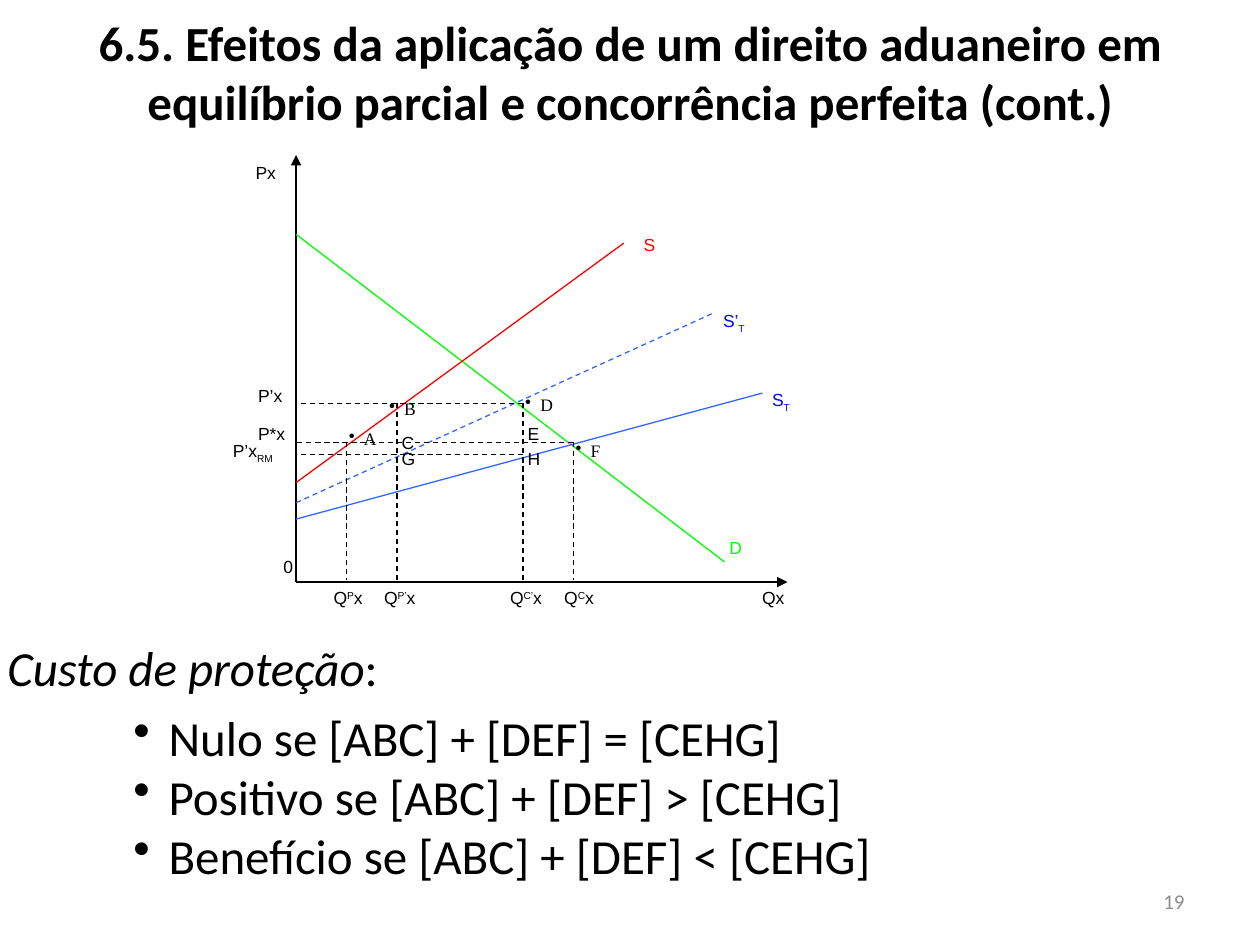
"""Build the slide on the effects of a customs duty in partial equilibrium."""
from lxml import etree
from pptx import Presentation
from pptx.dml.color import RGBColor
from pptx.enum.dml import MSO_LINE
from pptx.enum.shapes import MSO_CONNECTOR
from pptx.enum.text import MSO_ANCHOR, PP_ALIGN
from pptx.oxml.ns import qn
from pptx.util import Inches, Pt

STRAIGHT = MSO_CONNECTOR.STRAIGHT
DASH = MSO_LINE.DASH
TOP, MIDDLE = MSO_ANCHOR.TOP, MSO_ANCHOR.MIDDLE
LEFT, CENTER, RIGHT = PP_ALIGN.LEFT, PP_ALIGN.CENTER, PP_ALIGN.RIGHT
SUB, SUPER = -30, 30
COLORS = {"black": "000000", "gray": "8C8C8C", "green": "00FF00",
          "red": "FF0000", "sky": "3366FF", "blue": "0000FF"}


class Deck:
    """Hold the style and the current slide."""

    body, label, mark = "Calibri", "Arial", "Times New Roman"

    def __init__(self, show):
        self.slide = show.slides.add_slide(show.slide_layouts[5])

    def run(self, par, text, size, font, color="black", bold=False, italic=False, base=0):
        run = par.add_run()
        run.text = text
        run.font.size, run.font.name = Pt(size), font
        run.font.bold, run.font.italic = bold, italic
        run.font.color.rgb = RGBColor.from_string(COLORS[color])
        if base:
            run.font._element.set("baseline", str(base * 1000))

    def bullet(self, par, margin, hang):
        props = par._p.get_or_add_pPr()
        props.set("marL", str(Inches(margin)))
        props.set("indent", str(-Inches(hang)))
        etree.SubElement(props, qn("a:buChar")).set("char", "•")

    def title(self, text, left, top, width, height):
        shape = self.slide.shapes.title
        shape.left, shape.top = Inches(left), Inches(top)
        shape.width, shape.height = Inches(width), Inches(height)
        frame = shape.text_frame
        frame.word_wrap, frame.vertical_anchor = True, TOP
        par = frame.paragraphs[0]
        par.alignment = CENTER
        self.run(par, text, 28, self.body, bold=True)

    def box(self, left, top, width, height, anchor=TOP, align=LEFT):
        shape = self.slide.shapes.add_textbox(
            Inches(left), Inches(top), Inches(width), Inches(height))
        frame = shape.text_frame
        frame.word_wrap, frame.vertical_anchor = True, anchor
        frame.paragraphs[0].alignment = align
        return frame

    def tag(self, left, top, parts, color="black", width=0.7):
        par = self.box(left, top, width, 0.4).paragraphs[0]
        for text, base in parts:
            self.run(par, text, 10, self.label, color, base=base)

    def point(self, left, top, name):
        par = self.box(left, top, 0.7, 0.4).paragraphs[0]
        self.bullet(par, 0.24, 0.12)
        self.run(par, name, 10, self.mark)

    def line(self, start, end, color="black", dash=False, arrow=False):
        line = self.slide.shapes.add_connector(
            STRAIGHT, *(Inches(n) for n in (*start, *end)))
        line.line.color.rgb = RGBColor.from_string(COLORS[color])
        line.line.width = Pt(0.75)
        if dash:
            line.line.dash_style = DASH
        if arrow:
            tail = etree.SubElement(line.line._get_or_add_ln(), qn("a:tailEnd"))
            tail.set("type", "triangle")
        etree.SubElement(line._element.spPr, qn("a:effectLst"))


def main():
    show = Presentation()
    show.slide_width, show.slide_height = Inches(10), Inches(7.5)
    deck = Deck(show)
    deck.title("6.5. Efeitos da aplicação de um direito aduaneiro em equilíbrio "
               "parcial e concorrência perfeita (cont.)", 0, 0.05, 10, 1.04)

    page = deck.box(7.17, 6.95, 2.33, 0.4, MIDDLE, RIGHT)
    deck.run(page.paragraphs[0], "19", 12, deck.body, "gray")

    head = deck.box(-0.04, 5.01, 10, 0.57, MIDDLE).paragraphs[0]
    deck.run(head, "Custo de proteção", 28, deck.body, italic=True)
    deck.run(head, ":", 28, deck.body)

    zero, base = 2.35, 4.62
    deck.line((zero, base), (zero, 1.23), arrow=True)
    deck.line((zero, base), (6.25, base), arrow=True)
    for start, end, color, dash in (
            (1.86, (5.75, 4.46), "green", False),
            (3.83, (4.95, 1.93), "red", False),
            (4.12, (6.05, 3.12), "sky", False),
            (3.99, (5.65, 2.49), "sky", True)):
        deck.line((zero, start), end, color, dash)

    duty, free, world = 3.2, 3.51, 3.61
    for x, y in ((4.55, free), (4.15, duty), (3.15, duty), (2.75, free)):
        deck.line((x, y), (x, base - 0.02), dash=True)
    for x, y in ((4.15, duty), (4.55, free), (4.15, world)):
        deck.line((x, y), (zero, y), dash=True)

    for left, top, name in ((4.35, 3.44, "F"), (3.95, 3.08, "D"),
                            (2.87, 3.11, "B"), (2.55, 3.35, "A")):
        deck.point(left, top, name)
    for left, top, text, color in (
            (3.09, 3.38, "C", "black"), (3.09, 3.51, "G", "black"),
            (4.09, 3.31, "E", "black"), (4.09, 3.51, "H", "black"),
            (1.95, 3.01, "P’x", "black"), (1.95, 3.31, "P*x", "black"),
            (5.95, 4.61, "Qx", "black"), (1.93, 1.24, "Px", "black"),
            (2.15, 4.36, "0", "black"), (5.01, 1.81, "S", "red"),
            (5.69, 4.21, "D", "green")):
        deck.tag(left, top, [(text, 0)], color)
    deck.tag(1.75, 3.44, [("P’x", 0), ("RM", SUB)], width=1)
    for left, top, text in ((6.03, 3.04, "S"), (5.64, 2.41, "S’")):
        deck.tag(left, top, [(text, 0), ("T", SUB)], "blue")
    for left, power in ((4.38, "C"), (3.95, "C’"), (2.95, "P’"), (2.55, "P")):
        deck.tag(left, 4.61, [("Q", 0), (power, SUPER), ("x", 0)])

    frame = deck.box(-0.04, 5.56, 10, 1.51, MIDDLE)
    for i, (case, sign) in enumerate((("Nulo", "="), ("Positivo", ">"), ("Benefício", "<"))):
        par = frame.add_paragraph() if i else frame.paragraphs[0]
        deck.bullet(par, 1.28, 0.28)
        deck.run(par, f"{case} se [ABC] + [DEF] {sign} [CEHG]", 28, deck.body)

    show.save("out.pptx")


if __name__ == "__main__":
    main()
